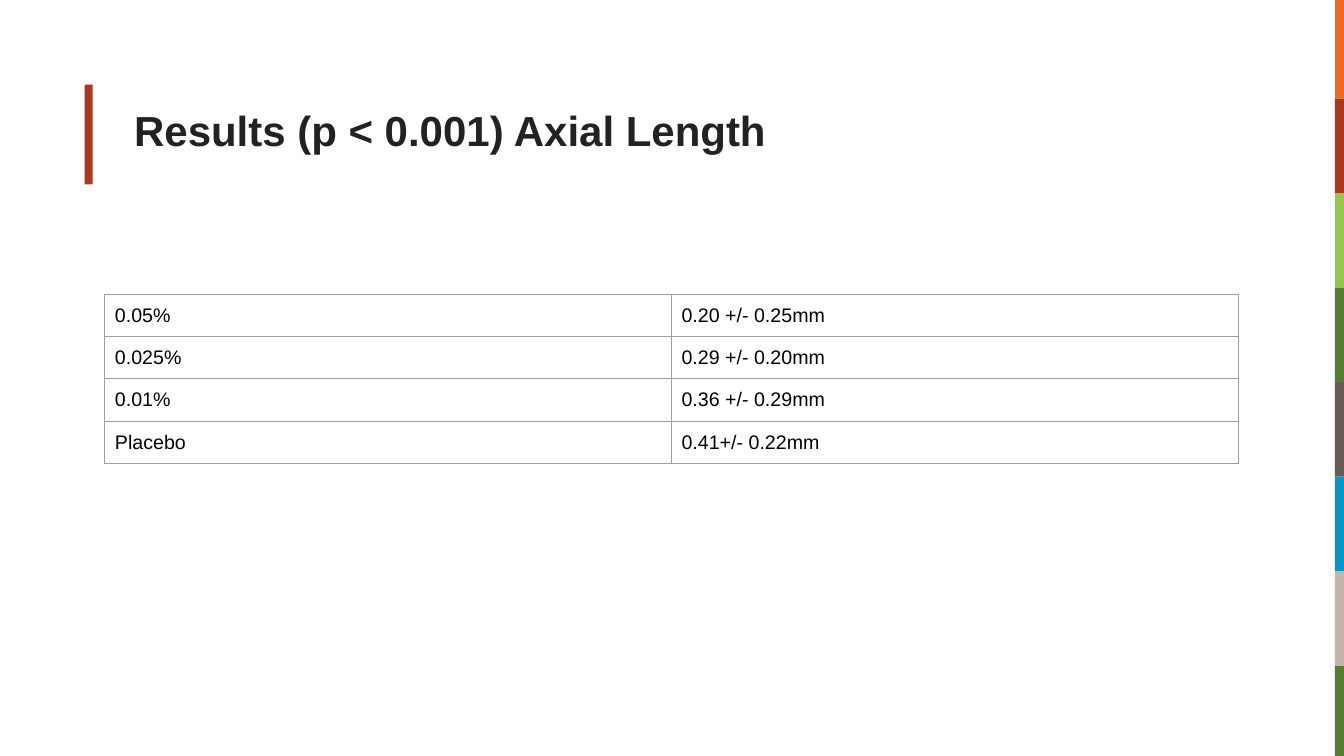
from dataclasses import dataclass

from lxml.etree import SubElement
from pptx import Presentation
from pptx.dml.color import RGBColor
from pptx.enum.shapes import MSO_SHAPE
from pptx.enum.text import MSO_ANCHOR, MSO_AUTO_SIZE, PP_ALIGN
from pptx.oxml.ns import qn
from pptx.slide import Slide
from pptx.table import _Cell
from pptx.text.text import _Paragraph
from pptx.util import Inches, Pt

SLIDE_WIDTH, SLIDE_HEIGHT = 13.33, 7.5
FONT_NAME = "Arial"

ORANGE = RGBColor(0xEF, 0x6B, 0x1A)
RUST = RGBColor(0xAB, 0x37, 0x1D)
LIME = RGBColor(0x94, 0xC8, 0x4B)
GREEN = RGBColor(0x53, 0x7D, 0x2F)
BROWN = RGBColor(0x67, 0x5B, 0x54)
BLUE = RGBColor(0x00, 0x97, 0xC4)
SAND = RGBColor(0xC2, 0xB6, 0xAC)
TITLE_COLOR = RGBColor(0x22, 0x22, 0x22)
BLACK = RGBColor(0, 0, 0)
BORDER_GRAY = RGBColor(0x9E, 0x9E, 0x9E)

STRIPE_COLORS = (ORANGE, RUST, LIME, GREEN, BROWN, BLUE, SAND, GREEN)
STRIPE_LEFT = 13.24
FIRST_STRIPE_HEIGHT = 0.98
STRIPES_BOTTOM = 7.54

TABLE_LEFT, TABLE_TOP = 1.04, 2.92
COLUMN_WIDTH, ROW_HEIGHT = 5.62, 0.42


@dataclass(frozen=True)
class Bar:
    left: float
    top: float
    width: float
    height: float
    color: RGBColor


@dataclass(frozen=True)
class AxialResult:
    dose: str
    change: str


RESULTS = (
    AxialResult("0.05%", "0.20 +/- 0.25mm"),
    AxialResult("0.025%", "0.29 +/- 0.20mm"),
    AxialResult("0.01%", "0.36 +/- 0.29mm"),
    AxialResult("Placebo", "0.41+/- 0.22mm"),
)


def edge_stripes() -> list[Bar]:
    """Stack the stripes down the right edge, ending at the slide's bottom."""
    step = (STRIPES_BOTTOM - FIRST_STRIPE_HEIGHT) / (len(STRIPE_COLORS) - 1)
    tops = [0.0] + [FIRST_STRIPE_HEIGHT + step * i for i in range(len(STRIPE_COLORS) - 1)]
    bottoms = tops[1:] + [SLIDE_HEIGHT]
    return [
        Bar(STRIPE_LEFT, top, SLIDE_WIDTH - STRIPE_LEFT, bottom - top, color)
        for top, bottom, color in zip(tops, bottoms, STRIPE_COLORS)
    ]


def draw_bar(slide: Slide, bar: Bar) -> None:
    shape = slide.shapes.add_shape(
        MSO_SHAPE.RECTANGLE,
        Inches(bar.left), Inches(bar.top), Inches(bar.width), Inches(bar.height),
    )
    shape.shadow.inherit = False
    shape.fill.solid()
    shape.fill.fore_color.rgb = bar.color
    shape.line.fill.background()


def set_font(paragraph: _Paragraph, size: int, color: RGBColor, bold: bool = False) -> None:
    font = paragraph.font
    font.name = FONT_NAME
    font.size = Pt(size)
    font.bold = bold
    font.color.rgb = color


def write_title(slide: Slide, text: str) -> None:
    title = slide.shapes.title
    title.left, title.top = Inches(1.23), Inches(0.62)
    title.width, title.height = Inches(11), Inches(1.25)
    frame = title.text_frame
    frame.text = text
    frame.word_wrap = True
    frame.auto_size = MSO_AUTO_SIZE.NONE
    frame.vertical_anchor = MSO_ANCHOR.MIDDLE
    paragraph = frame.paragraphs[0]
    paragraph.alignment = PP_ALIGN.LEFT
    paragraph.line_spacing = 1.15
    set_font(paragraph, 30, TITLE_COLOR, bold=True)


def add_borders(cell: _Cell) -> None:
    properties = cell._tc.get_or_add_tcPr()
    for side in ("a:lnL", "a:lnR", "a:lnT", "a:lnB"):
        line = SubElement(properties, qn(side), w=str(Pt(0.75)))
        fill = SubElement(line, qn("a:solidFill"))
        SubElement(fill, qn("a:srgbClr"), val=str(BORDER_GRAY))


def write_cell(cell: _Cell, text: str) -> None:
    cell.text = text
    cell.margin_left = cell.margin_right = Inches(0.1)
    cell.margin_top = cell.margin_bottom = Inches(0.1)
    add_borders(cell)
    cell.fill.background()
    set_font(cell.text_frame.paragraphs[0], 14, BLACK)


def draw_results(slide: Slide) -> None:
    table = slide.shapes.add_table(
        len(RESULTS), 2,
        Inches(TABLE_LEFT), Inches(TABLE_TOP),
        Inches(2 * COLUMN_WIDTH), Inches(len(RESULTS) * ROW_HEIGHT),
    ).table
    table.first_row = table.horz_banding = False
    for row, result in enumerate(RESULTS):
        write_cell(table.cell(row, 0), result.dose)
        write_cell(table.cell(row, 1), result.change)


def main() -> None:
    presentation = Presentation()
    presentation.slide_width = Inches(SLIDE_WIDTH)
    presentation.slide_height = Inches(SLIDE_HEIGHT)
    slide = presentation.slides.add_slide(presentation.slide_layouts[5])
    for bar in [Bar(0.84, 0.84, 0.08, 0.99, RUST), *edge_stripes()]:
        draw_bar(slide, bar)
    write_title(slide, "Results (p < 0.001) Axial Length")
    draw_results(slide)
    presentation.save("out.pptx")


if __name__ == "__main__":
    main()
